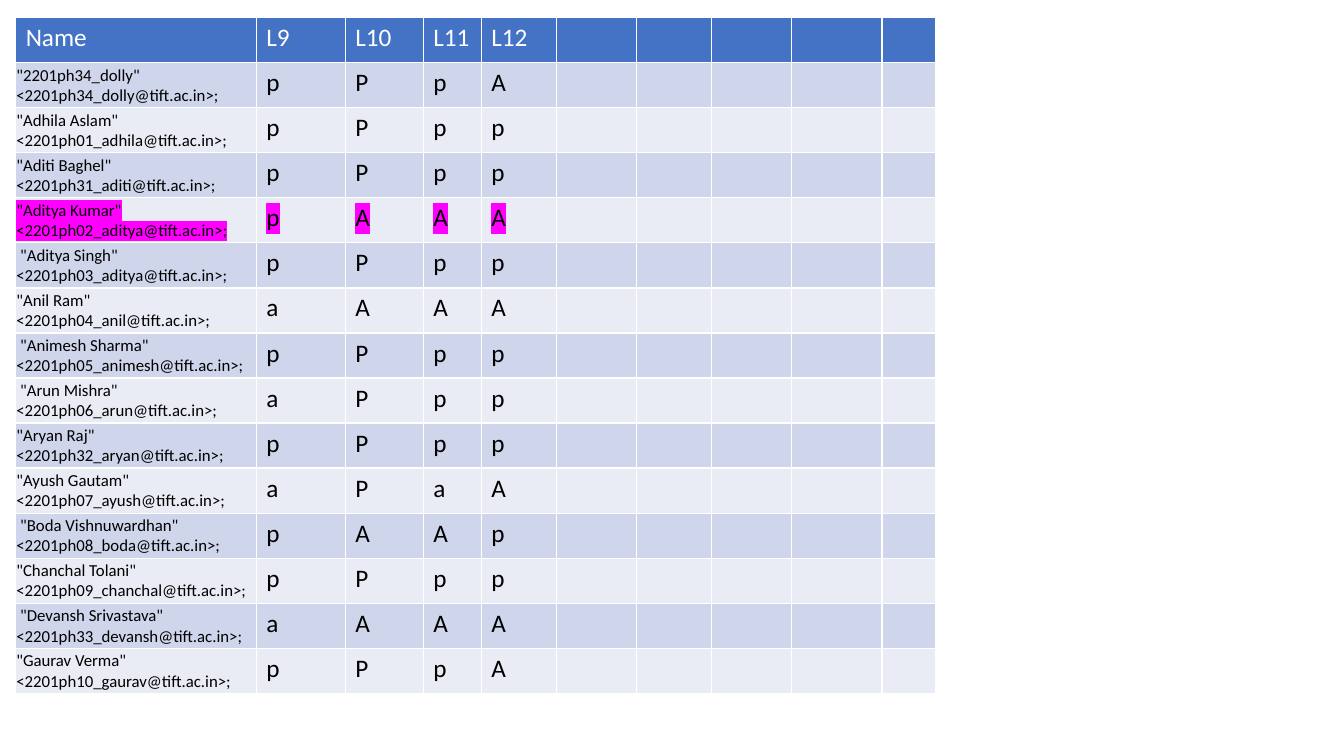
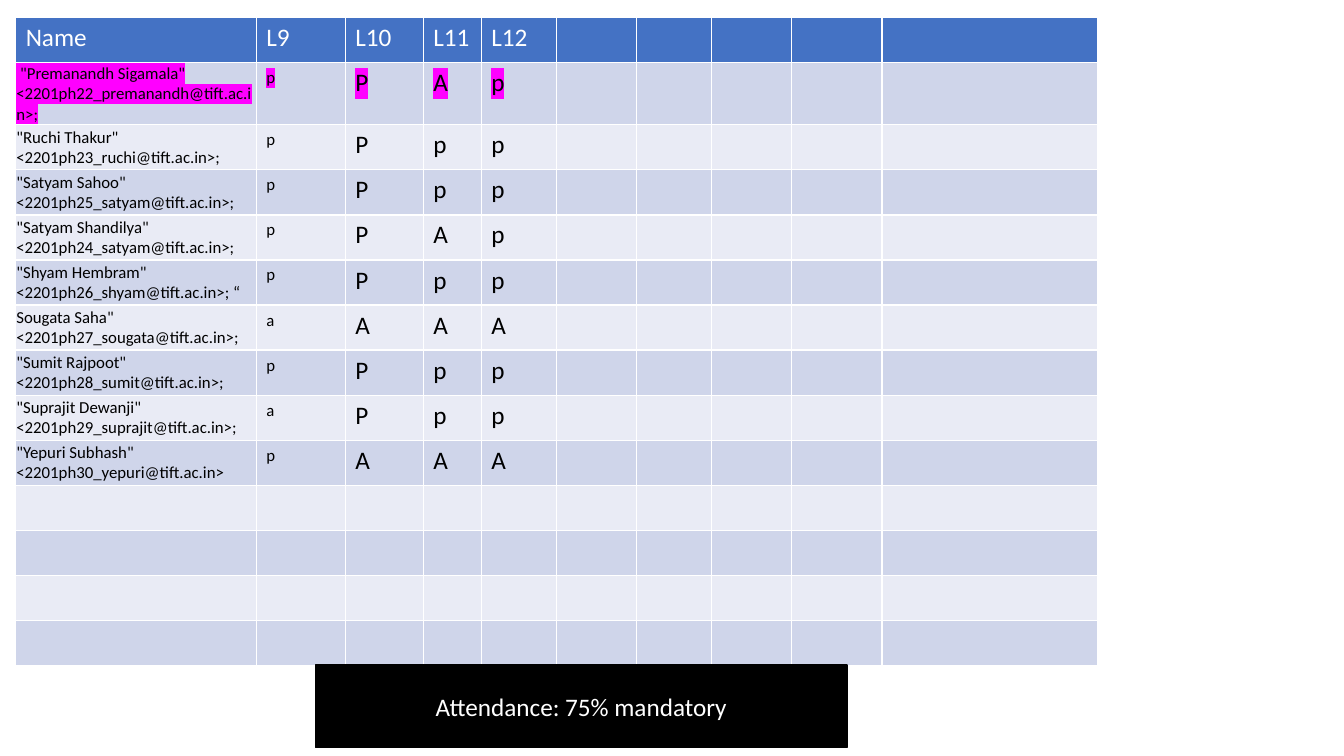
from lxml.etree import SubElement
from pptx import Presentation
from pptx.dml.color import RGBColor
from pptx.enum.shapes import MSO_SHAPE
from pptx.enum.text import MSO_ANCHOR, PP_ALIGN
from pptx.oxml.ns import qn
from pptx.util import Pt

FONT = "Calibri"
WHITE, BLACK, HEADER_BLUE, HIGHLIGHT = "FFFFFF", "000000", "4472C4", "FF00FF"
BANDS = "CFD5EA", "E9EBF5"
LEFT, TOP, ROW_HEIGHT = 11.2, 12.6, 32.2
HEADINGS = ["Name", "L9", "L10", "L11", "L12"]
SHARED_WIDTHS = [171.9, 63.6, 55.7, 41.4, 53.7, 57, 54, 57, 64.7]
NAME_SIZE, MARK_SIZE = 12, 18

REGISTERS = [
    {
        "last_width": 38.2,
        "first_mark_size": 18,
        "flagged": 4,
        "blank_rows": 0,
        "students": [
            ('"2201ph34_dolly" <2201ph34_dolly@tift.ac.in>;', "pPpA"),
            ('"Adhila Aslam" <2201ph01_adhila@tift.ac.in>;', "pPpp"),
            ('"Aditi Baghel" <2201ph31_aditi@tift.ac.in>;', "pPpp"),
            ('"Aditya Kumar" <2201ph02_aditya@tift.ac.in>;', "pAAA"),
            (' "Aditya Singh" <2201ph03_aditya@tift.ac.in>;', "pPpp"),
            ('"Anil Ram" <2201ph04_anil@tift.ac.in>;', "aAAA"),
            (' "Animesh Sharma" <2201ph05_animesh@tift.ac.in>;', "pPpp"),
            (' "Arun Mishra" <2201ph06_arun@tift.ac.in>;', "aPpp"),
            ('"Aryan Raj" <2201ph32_aryan@tift.ac.in>;', "pPpp"),
            ('"Ayush Gautam" <2201ph07_ayush@tift.ac.in>;', "aPaA"),
            (' "Boda Vishnuwardhan" <2201ph08_boda@tift.ac.in>;', "pAAp"),
            ('"Chanchal Tolani" <2201ph09_chanchal@tift.ac.in>;', "pPpp"),
            (' "Devansh Srivastava" <2201ph33_devansh@tift.ac.in>;', "aAAA"),
            ('"Gaurav Verma" <2201ph10_gaurav@tift.ac.in>;', "pPpA"),
        ],
    },
    {
        "last_width": 154.1,
        "first_mark_size": 12,
        "flagged": 1,
        "blank_rows": 4,
        "students": [
            (' "Premanandh Sigamala" <2201ph22_premanandh@tift.ac.in>;', "pPAp"),
            ('"Ruchi Thakur" <2201ph23_ruchi@tift.ac.in>;', "pPpp"),
            ('"Satyam Sahoo" <2201ph25_satyam@tift.ac.in>;', "pPpp"),
            ('"Satyam Shandilya" <2201ph24_satyam@tift.ac.in>;', "pPAp"),
            ('"Shyam Hembram" <2201ph26_shyam@tift.ac.in>; “', "pPpp"),
            ('Sougata Saha" <2201ph27_sougata@tift.ac.in>;', "aAAA"),
            ('"Sumit Rajpoot" <2201ph28_sumit@tift.ac.in>;', "pPpp"),
            ('"Suprajit Dewanji" <2201ph29_suprajit@tift.ac.in>;', "aPpp"),
            ('"Yepuri Subhash" <2201ph30_yepuri@tift.ac.in>', "pAAA"),
        ],
    },
]
RULE = "Attendance: 75% mandatory"


def rgb(value):
    return RGBColor.from_string(value)


def paint(part, color):
    part.fill.solid()
    part.fill.fore_color.rgb = rgb(color)


def write(frame, text, size, color):
    paragraph = frame.paragraphs[0]
    paragraph.text = text
    font = paragraph.font
    font.name, font.size, font.bold = FONT, Pt(size), False
    font.color.rgb = rgb(color)
    return paragraph


def highlight(paragraph):
    for run in paragraph.runs:
        marker = SubElement(run.font._element, qn("a:highlight"))
        SubElement(marker, qn("a:srgbClr"), val=HIGHLIGHT)


def tighten(cell):
    cell.vertical_anchor = MSO_ANCHOR.MIDDLE
    cell.margin_left = cell.margin_right = cell.margin_top = Pt(0.5)
    cell.margin_bottom = Pt(0)


def add_register(slide, register):
    widths = SHARED_WIDTHS + [register["last_width"]]
    rows = [HEADINGS] + [[name, *marks] for name, marks in register["students"]]
    rows += [[]] * register["blank_rows"]
    table = slide.shapes.add_table(
        len(rows), len(widths), Pt(LEFT), Pt(TOP),
        Pt(sum(widths)), Pt(ROW_HEIGHT * len(rows))).table
    for column, width in zip(table.columns, widths):
        column.width = Pt(width)
    sizes = [NAME_SIZE, register["first_mark_size"]] + [MARK_SIZE] * 3
    for r, texts in enumerate(rows):
        table.rows[r].height = Pt(ROW_HEIGHT)
        for c in range(len(widths)):
            paint(table.cell(r, c), BANDS[(r - 1) % 2] if r else HEADER_BLUE)
        for c, text in enumerate(texts):
            cell = table.cell(r, c)
            paragraph = write(cell.text_frame, text,
                              sizes[c] if r else MARK_SIZE, BLACK if r else WHITE)
            if r and c == 0:
                tighten(cell)
            if r == register["flagged"]:
                highlight(paragraph)


def add_rule(slide):
    banner = slide.shapes.add_shape(
        MSO_SHAPE.RECTANGLE, Pt(225.4), Pt(475), Pt(379.6), Pt(59))
    banner.shadow.inherit = False
    paint(banner, BLACK)
    banner.line.color.rgb = rgb(BLACK)
    banner.line.width = Pt(1)
    banner.text_frame.vertical_anchor = MSO_ANCHOR.MIDDLE
    write(banner.text_frame, RULE, 18, WHITE).alignment = PP_ALIGN.CENTER


def main():
    deck = Presentation()
    deck.slide_width, deck.slide_height = Pt(960), Pt(540)
    for register in REGISTERS:
        slide = deck.slides.add_slide(deck.slide_layouts[6])
        add_register(slide, register)
    add_rule(slide)
    deck.save("out.pptx")


if __name__ == "__main__":
    main()
